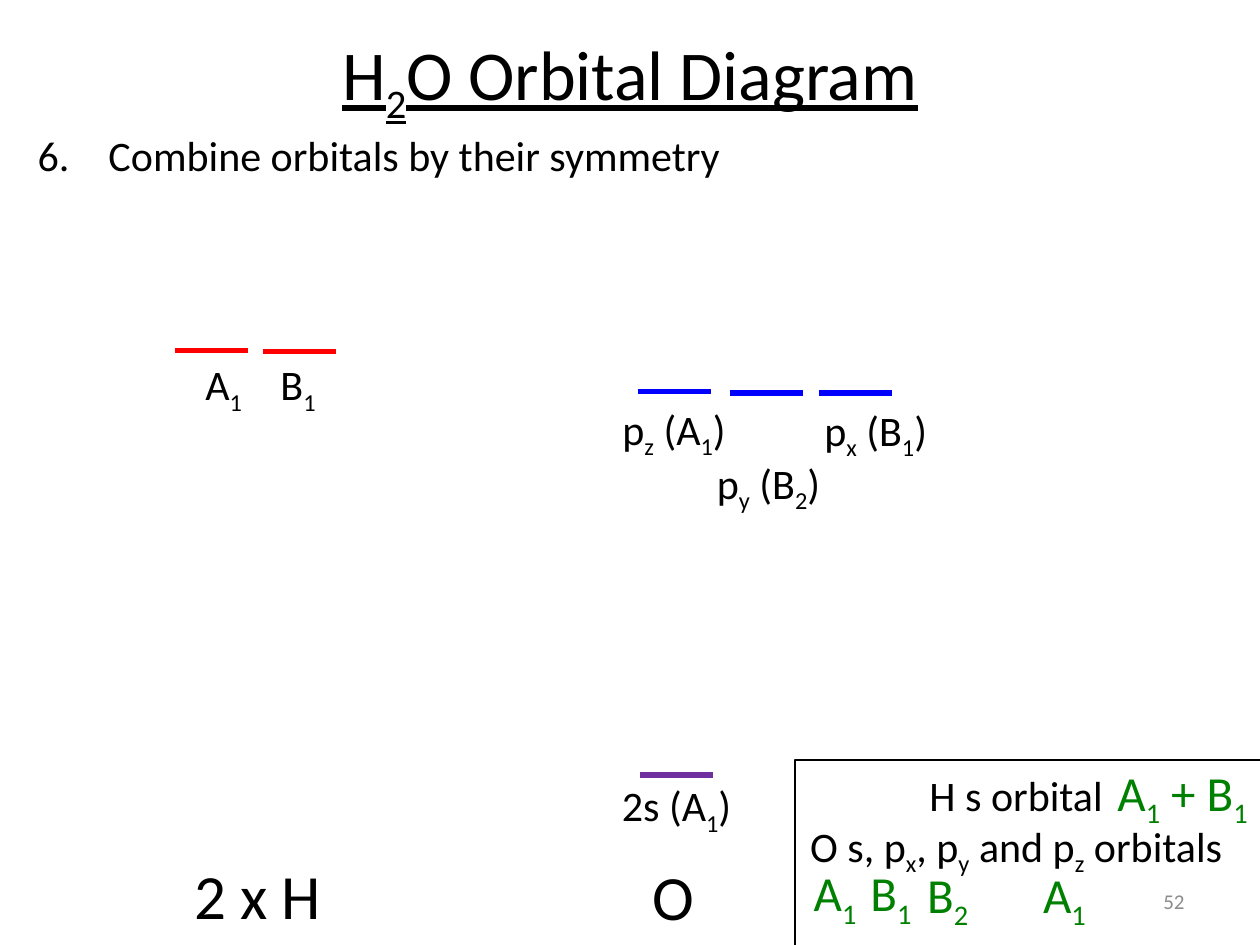
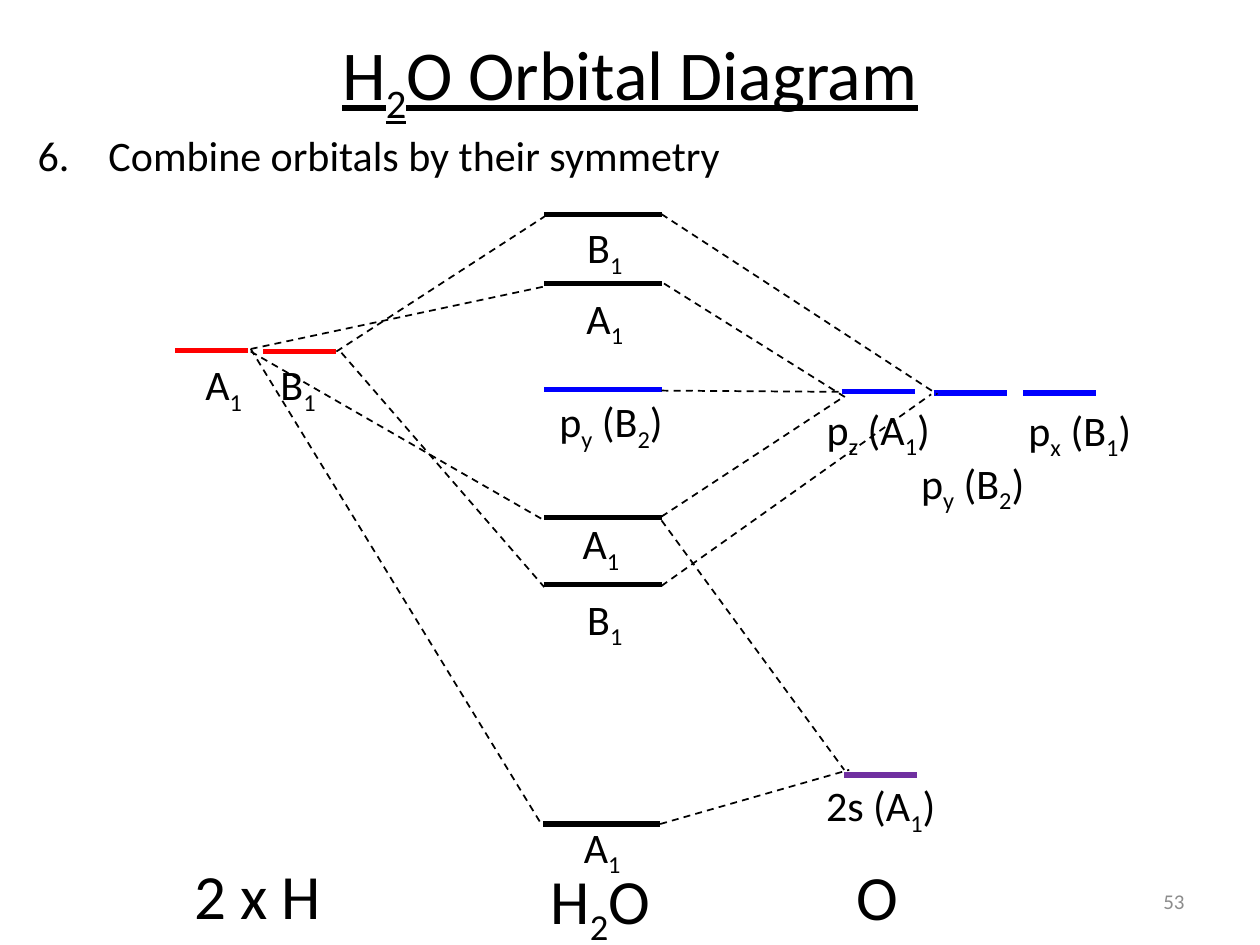
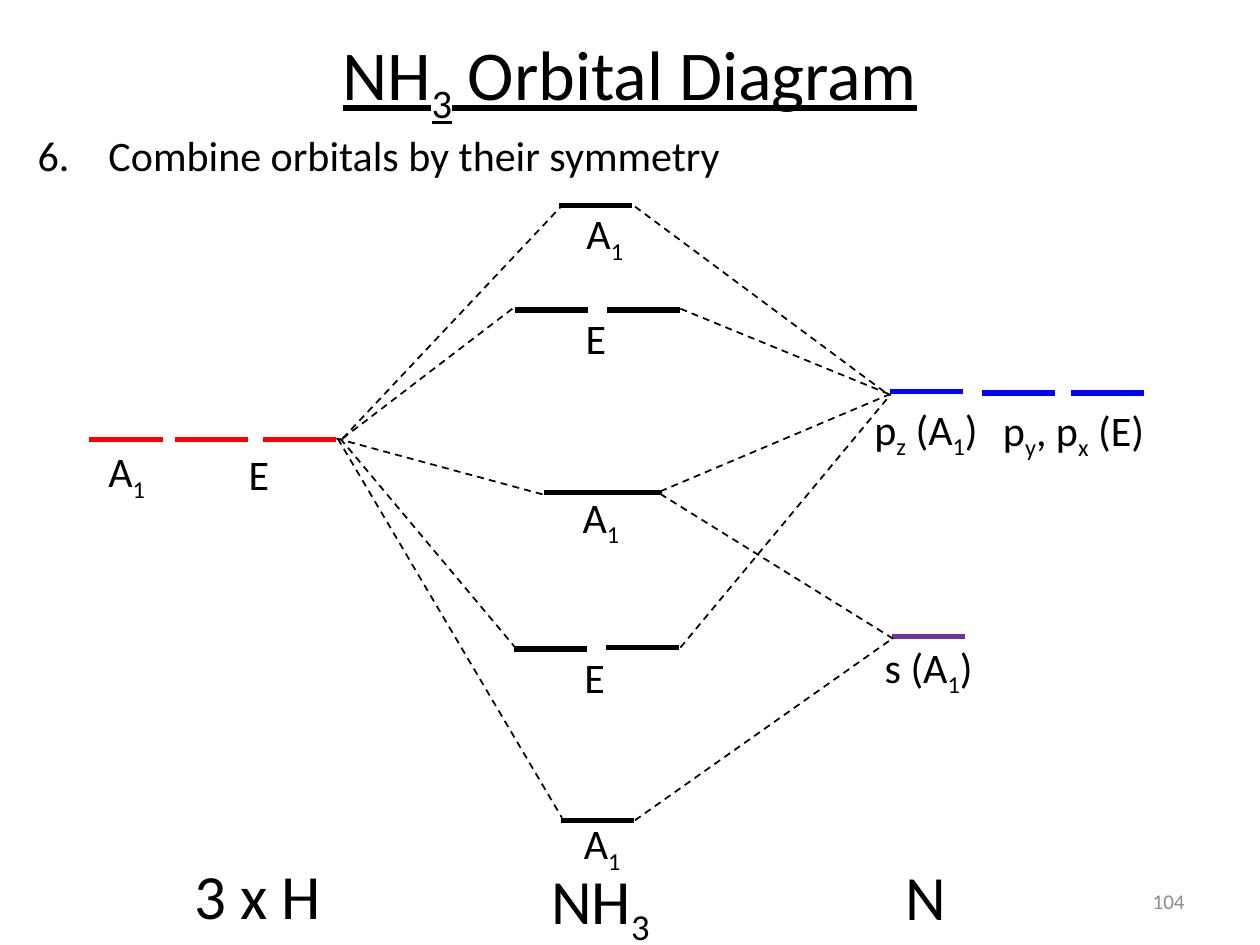
"""Build three slides of molecular orbital diagrams for water and ammonia."""
from lxml import etree
from pptx import Presentation
from pptx import util as u
from pptx.dml.color import RGBColor
from pptx.enum import dml, shapes, text
from pptx.oxml import ns

BLACK = RGBColor(0x00, 0x00, 0x00)
RED = RGBColor(0xFF, 0x00, 0x00)
BLUE = RGBColor(0x00, 0x00, 0xFF)
PURPLE = RGBColor(0x70, 0x30, 0xA0)
GREEN = RGBColor(0x00, 0x80, 0x00)
GREY = RGBColor(0x8C, 0x8C, 0x8C)
FONT = "Calibri"
INCH = 2.54
LEVEL_W = 0.58
WIDE_W = 0.93
LEFT, CENTER, RIGHT = text.PP_ALIGN.LEFT, text.PP_ALIGN.CENTER, text.PP_ALIGN.RIGHT


def add_text(s, box, lines, size=24, color=BLACK, align=CENTER, underline=None, middle=False):
    """Add a text box; the character after each underscore is a subscript."""
    sp = s.shapes.add_textbox(*[u.Cm(v * INCH) for v in box])
    tf = sp.text_frame
    tf.word_wrap = True
    if middle:
        tf.vertical_anchor = text.MSO_ANCHOR.MIDDLE
    for i, line in enumerate(lines.split("\n")):
        p = tf.add_paragraph() if i else tf.paragraphs[0]
        p.alignment = align
        first, *rest = line.split("_")
        pieces = [(first, False)]
        for part in rest:
            pieces += [(part[0], True), (part[1:], False)]
        for piece, subscript in pieces:
            if piece:
                r = p.add_run()
                r.text = piece
                r.font.name = FONT
                r.font.size = u.Pt(size)
                r.font.color.rgb = color
                r.font.underline = underline
                if subscript:
                    r._r.get_or_add_rPr().set("baseline", "-25000")
    return tf


def add_line(s, x1, y1, x2, y2, color=BLACK, width=3, dashed=False):
    """Add a straight line without a shadow."""
    ends = [u.Cm(v * INCH) for v in (x1, y1, x2, y2)]
    sp = s.shapes.add_connector(shapes.MSO_CONNECTOR.STRAIGHT, *ends)
    sp.line.color.rgb = color
    sp.line.width = u.Pt(width)
    if dashed:
        sp.line.dash_style = dml.MSO_LINE.DASH
    etree.SubElement(sp._element.spPr, ns.qn("a:effectLst"))


WATER = {
    "title": "H_2O Orbital Diagram", "hydrogens": "2 x H", "atom": "O",
    "h_levels": [(1.39, 2.78), (2.09, 2.79)],
    "h_labels": [(1.48, 2.8, 0.59, "A_1"), (2.07, 2.8, 0.59, "B_1")],
    "s_y": 6.15, "s_name": "2s (A_1)",
    "p_labels": [(-0.31, 3.15, 1.2, "p_z (A_1)"), (0.44, 3.58, 1.2, "p_y (B_2)"),
                 (1.29, 3.16, 1.2, "p_x (B_1)")],
}

DIAGRAMS = [
    WATER | {"number": "52", "atom_x": 5.06, "molecule": None, "levels": [], "labels": [], "links": []},
    WATER | {
        "number": "53", "atom_x": 6.68, "molecule": "H_2O",
        "levels": [(4.32, 1.7, WIDE_W, BLACK), (4.32, 2.25, WIDE_W, BLACK), (4.32, 3.09, WIDE_W, BLUE),
                   (4.32, 4.11, WIDE_W, BLACK), (4.32, 4.64, WIDE_W, BLACK), (4.31, 6.54, WIDE_W, BLACK)],
        "labels": [(4.2, 1.71, "B_1"), (4.2, 2.27, "A_1"), (4.25, 3.09, "p_y (B_2)"),
                   (4.17, 4.06, "A_1"), (4.2, 4.66, "B_1"), (4.18, 6.47, "A_1")],
        "links": [(2.67, 2.79, 4.32, 1.72), (1.99, 2.77, 4.34, 2.27), (1.99, 2.79, 4.32, 4.13),
                  (2.71, 2.8, 4.32, 4.66), (1.99, 2.77, 4.29, 6.53), (5.25, 1.7, 7.44, 3.13),
                  (5.27, 2.25, 6.72, 3.16), (5.25, 3.1, 6.67, 3.11), (5.25, 4.1, 6.68, 3.16),
                  (5.25, 4.13, 6.7, 6.11), (5.25, 4.65, 7.39, 3.13), (5.24, 6.54, 6.74, 6.11)],
    },
    {
        "title": "NH_3 Orbital Diagram", "hydrogens": "3 x H", "atom": "N",
        "number": "104", "atom_x": 7.06, "molecule": "NH_3",
        "h_levels": [(0.71, 3.49), (1.39, 3.49), (2.09, 3.49)],
        "h_labels": [(0.62, 3.49, 0.77, "A_1"), (1.76, 3.51, 0.59, "E")],
        "s_y": 5.05, "s_name": "s (A_1)",
        "p_labels": [(-0.31, 3.15, 1.2, "p_z (A_1)"), (0.66, 3.16, 1.6, "p_y, p_x (E)")],
        "levels": [(4.44, 1.63, LEVEL_W, BLACK), (4.09, 2.46, LEVEL_W, BLACK), (4.82, 2.46, LEVEL_W, BLACK),
                   (4.32, 3.91, WIDE_W, BLACK), (4.08, 5.15, LEVEL_W, BLACK), (4.81, 5.14, LEVEL_W, BLACK),
                   (4.45, 6.51, LEVEL_W, BLACK)],
        "labels": [(4.2, 1.6, "A_1"), (4.13, 2.43, "E"), (4.17, 3.85, "A_1"),
                   (4.12, 5.12, "E"), (4.18, 6.44, "A_1")],
        "links": [(2.72, 3.48, 4.48, 1.61), (2.72, 3.48, 4.08, 2.44), (2.67, 3.48, 4.33, 3.93),
                  (2.7, 3.48, 4.09, 5.14), (2.68, 3.48, 4.46, 6.49), (5.04, 1.64, 7.06, 3.14),
                  (5.4, 2.45, 7.06, 3.13), (5.24, 3.9, 7.06, 3.13), (5.24, 3.92, 7.09, 5.07),
                  (5.4, 5.14, 7.07, 3.13), (5.04, 6.51, 7.08, 5.07)],
    },
]

prs = Presentation()
prs.slide_width, prs.slide_height = u.Cm(25.4), u.Cm(19.05)

for d in DIAGRAMS:
    s = prs.slides.add_slide(prs.slide_layouts[6])
    add_text(s, (0.5, 0, 9, 1.25), d["title"], 40, underline=True, middle=True)
    tf = add_text(s, (0.2, 0.98, 9, 0.73), "Combine orbitals by their symmetry", align=LEFT)
    p = tf.paragraphs[0]
    p.space_before = u.Pt(4.8)
    pPr = p._p.get_or_add_pPr()
    pPr.set("marL", str(u.Cm(1.43)))
    pPr.set("indent", str(-u.Cm(1.43)))
    etree.SubElement(pPr, ns.qn("a:buAutoNum"), type="arabicPeriod", startAt="6")

    atom_x = d["atom_x"]
    add_text(s, (1.34, 6.75, 1.41, 0.71), d["hydrogens"], 36)
    add_text(s, (atom_x - 0.32, 6.76, 1.21, 0.71), d["atom"], 36)
    if d["molecule"]:
        add_text(s, (4.16, 6.79, 1.21, 0.71), d["molecule"], 36)

    for x, y, w, name in d["h_labels"]:
        add_text(s, (x, y, w, 0.5), name)
    for dx, y, w, name in d["p_labels"]:
        add_text(s, (atom_x + dx, y, w, 0.5), name)
    add_text(s, (atom_x - 0.29, d["s_y"] - 0.01, 1.2, 0.5), d["s_name"])
    for x, y, name in d["labels"]:
        add_text(s, (x, y, 1.2, 0.5), name)

    levels = [(x, y, LEVEL_W, RED) for x, y in d["h_levels"]]
    levels += [(atom_x + dx, y, LEVEL_W, BLUE) for dx, y in ((0, 3.11), (0.73, 3.12), (1.44, 3.12))]
    levels += [(atom_x + 0.02, d["s_y"], LEVEL_W, PURPLE)]
    for x, y, w, color in levels + d["levels"]:
        add_line(s, x, y, x + w, y, color)
    for link in d["links"]:
        add_line(s, *link, width=1, dashed=True)

    add_text(s, (7.17, 6.95, 2.33, 0.4), d["number"], 12, GREY, RIGHT, middle=True)

s = prs.slides[0]
frame = [u.Cm(v * INCH) for v in (6.31, 6.03, 3.89, 1.75)]
sp = s.shapes.add_shape(shapes.MSO_SHAPE.RECTANGLE, *frame)
sp.shadow.inherit = False
sp.fill.background()
sp.line.color.rgb = BLACK
sp.line.width = u.Pt(1)
add_text(s, (6.13, 6.06, 3.87, 0.91), "H s orbital\nO s, p_x, p_y and p_z orbitals")
for x, y, w, name in [(8.77, 6, 1.42, "A_1 + B_1"), (6.36, 6.8, 0.68, "A_1"), (6.81, 6.8, 0.68, "B_1"),
                      (7.26, 6.81, 0.68, "B_2"), (8.18, 6.81, 0.68, "A_1")]:
    add_text(s, (x, y, w, 0.57), name, 28, GREEN, LEFT)

prs.save("out.pptx")
